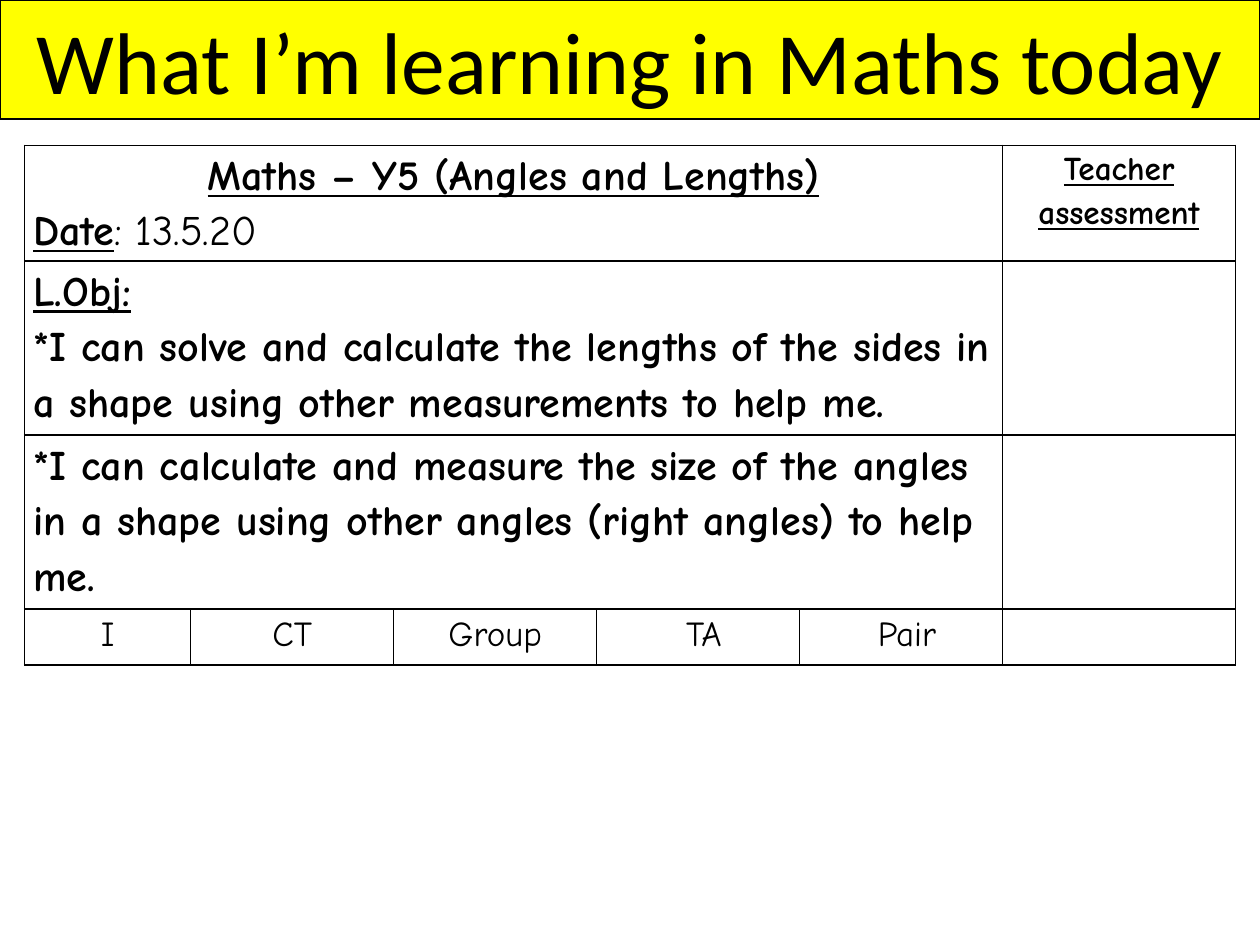
from lxml import etree
from pptx import Presentation
from pptx.dml.color import RGBColor
from pptx.enum.text import MSO_AUTO_SIZE, MSO_ANCHOR, PP_ALIGN
from pptx.oxml.ns import qn
from pptx.util import Pt

BLACK = RGBColor(0, 0, 0)
WHITE = RGBColor(255, 255, 255)
YELLOW = RGBColor(255, 255, 0)
LEFT, CENTER = PP_ALIGN.LEFT, PP_ALIGN.CENTER
GROW = MSO_AUTO_SIZE.SHAPE_TO_FIT_TEXT
MIDDLE = MSO_ANCHOR.MIDDLE

COL_WIDTHS = [95, 116, 116, 116, 116, 133]
ROW_HEIGHTS = [64, 66, 66, 32]
HELPERS = ["I", "CT", "Group", "TA", "Pair"]
OBJECTIVES = [
    "*I can solve and calculate the lengths of the sides in a shape "
    "using other measurements to help me.",
    "*I can calculate and measure the size of the angles in a shape "
    "using other angles (right angles) to help me.",
]


def add_run(p, text, font, size, bold=False, underline=False):
    r = p.add_run()
    r.text = text
    r.font.name, r.font.size = font, Pt(size)
    r.font.bold, r.font.underline = bold, underline
    r.font.color.rgb = BLACK


def add_title(s, text):
    sp = s.shapes.title
    sp.left, sp.top, sp.width, sp.height = Pt(0), Pt(0), Pt(720), Pt(68)
    sp.fill.solid()
    sp.fill.fore_color.rgb = YELLOW
    sp.line.color.rgb = BLACK
    sp.line.width = Pt(1)
    tf = sp.text_frame
    tf.word_wrap, tf.auto_size, tf.vertical_anchor = True, GROW, MIDDLE
    p = tf.paragraphs[0]
    p.alignment = CENTER
    add_run(p, text, "Calibri", 50)


def add_border(cell):
    tc_pr = cell._tc.get_or_add_tcPr()
    for side in ("a:lnL", "a:lnR", "a:lnT", "a:lnB"):
        ln = etree.SubElement(tc_pr, qn(side), w=str(Pt(1)))
        fill = etree.SubElement(ln, qn("a:solidFill"))
        etree.SubElement(fill, qn("a:srgbClr"), val=str(BLACK))


def add_table(s):
    frame = s.shapes.add_table(len(ROW_HEIGHTS), len(COL_WIDTHS), Pt(14), Pt(83),
                               Pt(sum(COL_WIDTHS)), Pt(sum(ROW_HEIGHTS)))
    table = frame.table
    table.first_row = table.horz_banding = False
    for col, width in zip(table.columns, COL_WIDTHS):
        col.width = Pt(width)
    for row, height in zip(table.rows, ROW_HEIGHTS):
        row.height = Pt(height)
    for cell in table.iter_cells():
        add_border(cell)
        cell.fill.solid()
        cell.fill.fore_color.rgb = WHITE
    # The heading and the objectives span all columns but the last
    for row in range(3):
        table.cell(row, 0).merge(table.cell(row, 4))
    return table


def fill_cell(cell, paragraphs, size, indent=0):
    """Each paragraph is (alignment, [(text, bold, underline), ...])."""
    cell.margin_left = cell.margin_right = Pt(5)
    cell.margin_top = cell.margin_bottom = Pt(0)
    tf = cell.text_frame
    for i, (align, runs) in enumerate(paragraphs):
        p = tf.add_paragraph() if i else tf.paragraphs[0]
        p.alignment, p.line_spacing = align, 1.15
        if indent:
            p._p.get_or_add_pPr().set("marL", str(Pt(indent)))
        for text, bold, underline in runs:
            add_run(p, text, "Comic Neue", size, bold, underline)


def main():
    prs = Presentation()
    prs.slide_width, prs.slide_height = Pt(720), Pt(540)
    s = prs.slides.add_slide(prs.slide_layouts[5])

    add_title(s, "What I’m learning in Maths today")
    table = add_table(s)

    # Heading row
    fill_cell(table.cell(0, 0), [
        (CENTER, [("Maths – Y5 (Angles and Lengths)", True, True)]),
        (LEFT, [("Date", True, True), (": 13.5.20", False, False)]),
    ], 24)
    fill_cell(table.cell(0, 5), [(CENTER, [("Teacher assessment", True, True)])], 19)

    # Learning objectives
    first, second = [(LEFT, [(text, True, False)]) for text in OBJECTIVES]
    fill_cell(table.cell(1, 0), [(LEFT, [("L.Obj:", True, True)]), first], 24)
    fill_cell(table.cell(2, 0), [second], 24)

    # Kinds of support
    for col, helper in enumerate(HELPERS):
        fill_cell(table.cell(3, col), [(CENTER, [(helper, False, False)])], 20,
                  indent=6.5 if col > 2 else 0)

    prs.save("out.pptx")


if __name__ == "__main__":
    main()
